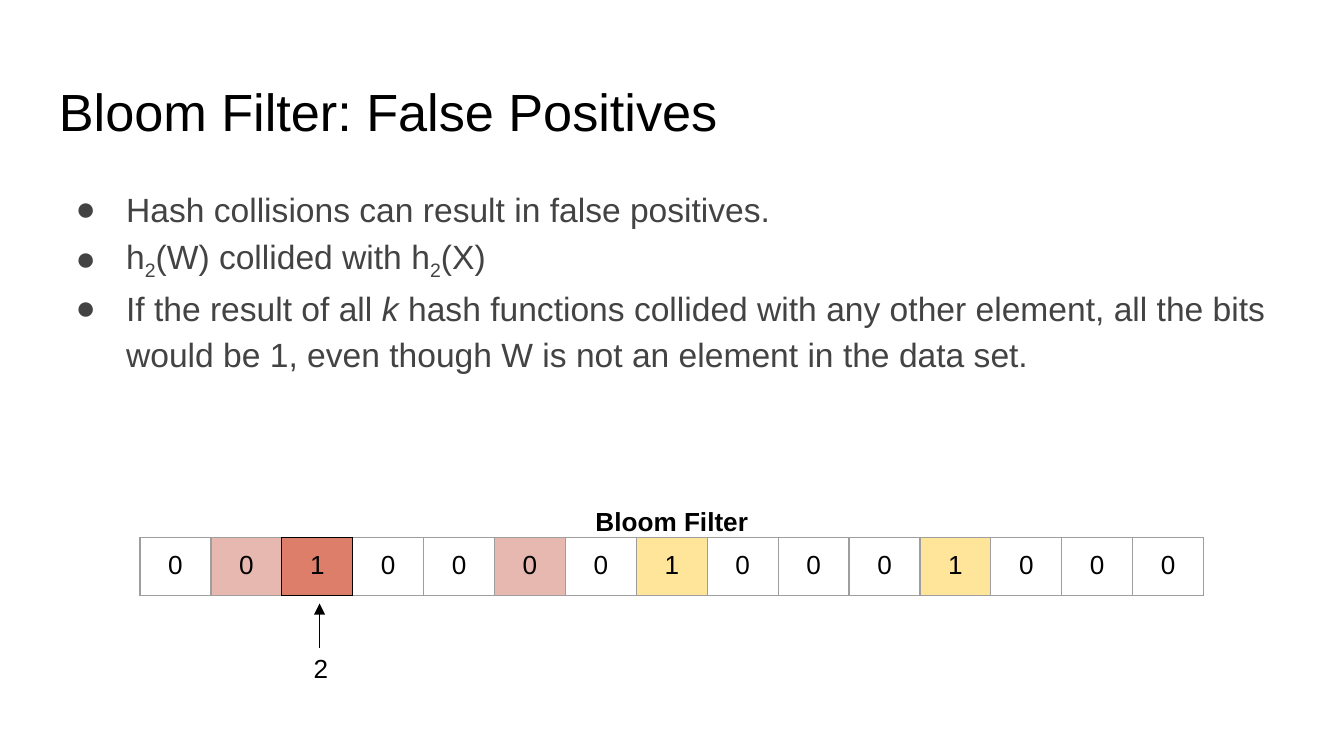
from dataclasses import dataclass

from lxml import etree
from pptx import Presentation
from pptx import util as u
from pptx.dml.color import RGBColor
from pptx.enum import shapes, text
from pptx.oxml import ns


@dataclass(frozen=True)
class Theme:
    font: str = "Arial"
    ink: str = "000000"
    body: str = "434343"
    grid: str = "9E9E9E"
    probed: str = "E6B8AF"
    collision: str = "DD7E6B"
    stored: str = "FFE599"
    title_size: float = 28
    body_size: float = 18
    label_size: float = 14
    line: float = 0.75


def add_xml(parent, tag, **attributes):
    return etree.SubElement(parent, ns.qn(tag), attributes)


class SlideBuilder:
    def __init__(self, slide, theme):
        self.slide = slide
        self.theme = theme

    def style(self, span, size, color, bold=False):
        span.font.name = self.theme.font
        span.font.size = u.Pt(size)
        span.font.color.rgb = RGBColor.from_string(color)
        span.font.bold = bold

    def box(self, left, top, width, height):
        box = self.slide.shapes.add_textbox(*map(u.Pt, (left, top, width, height)))
        frame = box.text_frame
        frame.word_wrap = True
        frame.margin_left = frame.margin_right = u.Pt(7.2)
        frame.margin_top = frame.margin_bottom = u.Pt(7.2)
        return frame

    def label(self, words, area, size, bold=False, align=text.PP_ALIGN.CENTER):
        para = self.box(*area).paragraphs[0]
        para.text = words
        para.alignment = align
        self.style(para.runs[0], size, self.theme.ink, bold)

    def bullets(self, items, area):
        frame = self.box(*area)
        for index, item in enumerate(items):
            para = frame.add_paragraph() if index else frame.paragraphs[0]
            para.line_spacing = 1.15
            properties = para._p.get_or_add_pPr()
            properties.set("marL", str(u.Pt(36)))
            properties.set("indent", str(u.Pt(-27)))
            color = add_xml(properties, "a:buClr")
            add_xml(color, "a:srgbClr", val=self.theme.body)
            add_xml(properties, "a:buFont", typeface=self.theme.font)
            add_xml(properties, "a:buChar", char="●")
            for words, kind in item:
                span = para.add_run()
                span.text = words
                self.style(span, self.theme.body_size, self.theme.body)
                span.font.italic = kind == "italic"
                if kind == "sub":
                    span._r.get_or_add_rPr().set("baseline", "-25000")

    def border(self, cell, side, color):
        line = add_xml(cell._tc.get_or_add_tcPr(), f"a:ln{side}",
                       w=str(u.Pt(self.theme.line)))
        fill = add_xml(line, "a:solidFill")
        add_xml(fill, "a:srgbClr", val=color)

    def bit_array(self, bits, fills, outlined, left, top, cell_width, height):
        area = map(u.Pt, (left, top, cell_width * len(bits), height))
        table = self.slide.shapes.add_table(1, len(bits), *area).table
        table.first_row = table.horz_banding = False
        table.rows[0].height = u.Pt(height)
        for index, bit in enumerate(bits):
            table.columns[index].width = u.Pt(cell_width)
            cell = table.cell(0, index)
            cell.margin_left = cell.margin_right = u.Pt(7.2)
            cell.margin_top = cell.margin_bottom = u.Pt(7.2)
            dark_sides = {outlined - 1: "R", outlined: "LRTB", outlined + 1: "L"}.get(index, "")
            for side in "LRTB":
                self.border(cell, side, self.theme.ink if side in dark_sides else self.theme.grid)
            if index in fills:
                cell.fill.solid()
                cell.fill.fore_color.rgb = RGBColor.from_string(fills[index])
            else:
                cell.fill.background()
            para = cell.text_frame.paragraphs[0]
            para.text = bit
            para.alignment = text.PP_ALIGN.CENTER
            self.style(para.runs[0], self.theme.label_size, self.theme.ink)

    def arrow(self, start, end):
        arrow = self.slide.shapes.add_connector(
            shapes.MSO_CONNECTOR.STRAIGHT, *map(u.Pt, (*start, *end)))
        arrow.line.color.rgb = RGBColor.from_string(self.theme.ink)
        arrow.line.width = u.Pt(self.theme.line)
        add_xml(arrow.line._get_or_add_ln(), "a:tailEnd", type="triangle")
        add_xml(arrow._element.spPr, "a:effectLst")


def main():
    deck = Presentation()
    deck.slide_width, deck.slide_height = u.Pt(720), u.Pt(405)
    theme = Theme()
    builder = SlideBuilder(deck.slides.add_slide(deck.slide_layouts[6]), theme)

    builder.label("Bloom Filter: False Positives", (24.5, 35, 671, 45),
                  theme.title_size, align=text.PP_ALIGN.LEFT)
    builder.bullets([
        [("Hash collisions can result in false positives.", "")],
        [("h", ""), ("2", "sub"), ("(W) collided with h", ""), ("2", "sub"), ("(X)", "")],
        [("If the result of all ", ""), ("k", "italic"),
         (" hash functions collided with any other element, all the bits would be 1, "
          "even though W is not an element in the data set.", "")],
    ], (24.5, 90.7, 671, 118))

    collision = 2
    fills = {1: theme.probed, collision: theme.collision, 5: theme.probed,
             7: theme.stored, 11: theme.stored}
    builder.bit_array("001000010001000", fills, collision, 75, 288, 38, 30)
    builder.label("Bloom Filter", (296.6, 263.5, 126.7, 31), theme.label_size, bold=True)
    builder.arrow((171.2, 347), (171.2, 323.3))
    builder.label(str(collision), (160.9, 342.2, 21, 27.4), theme.label_size)

    deck.save("out.pptx")


if __name__ == "__main__":
    main()
